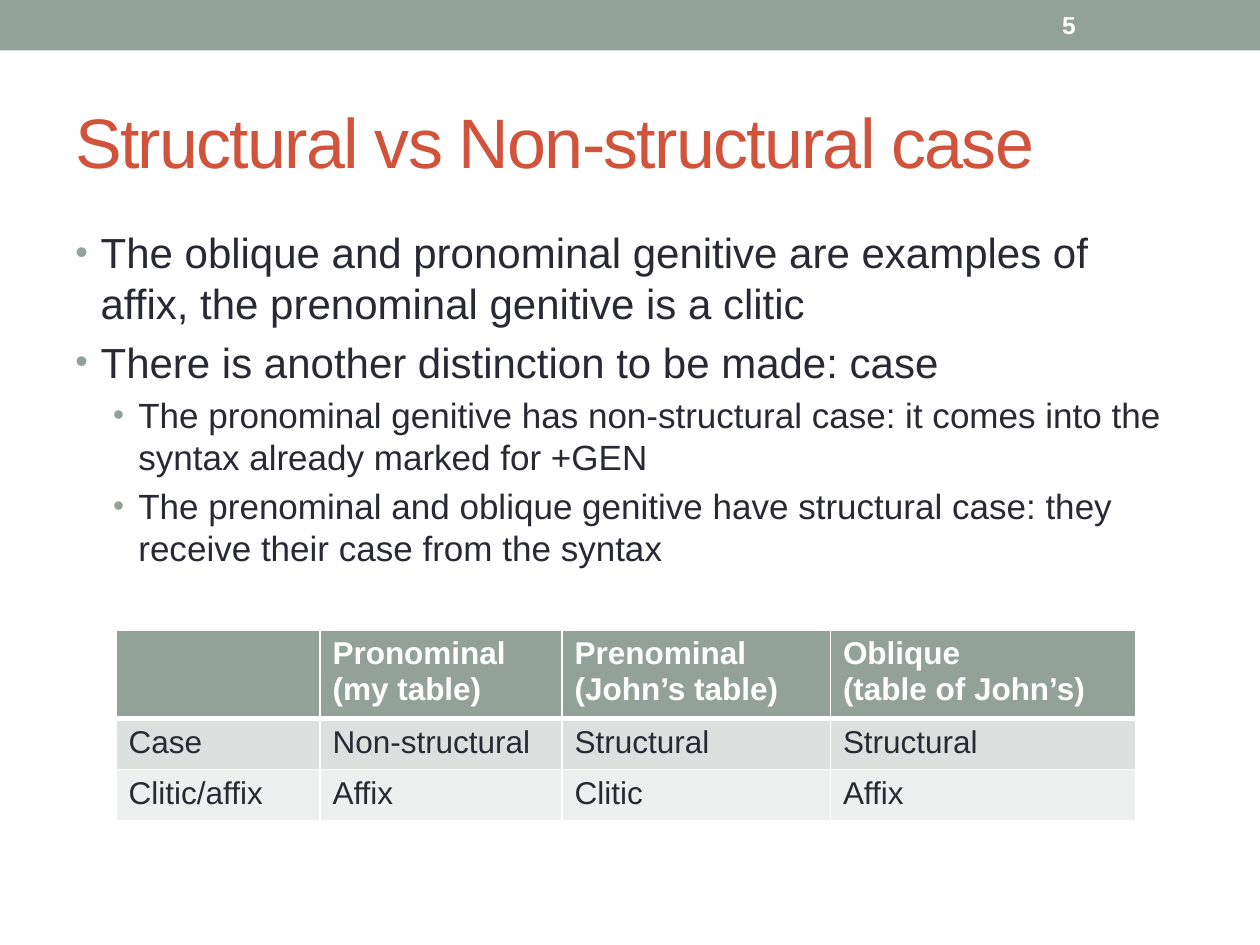
import pptx
import pptx.dml.color
import pptx.enum.shapes
import pptx.enum.text
import pptx.oxml
import pptx.oxml.ns
import pptx.util

Cm = pptx.util.Cm
Pt = pptx.util.Pt
RGBColor = pptx.dml.color.RGBColor

SAGE = RGBColor(0x93, 0xA2, 0x99)
RUST = RGBColor(0xD2, 0x53, 0x3C)
INK = RGBColor(0x29, 0x29, 0x34)
WHITE = RGBColor(0xFF, 0xFF, 0xFF)
ROW_FILLS = [SAGE, RGBColor(0xDC, 0xE0, 0xDE), RGBColor(0xEE, 0xF0, 0xEF)]
NAMESPACE = pptx.oxml.ns.nsdecls("a")

BULLETS = [
    (0, "The oblique and pronominal genitive are examples of affix, the prenominal genitive is a clitic"),
    (0, "There is another distinction to be made: case"),
    (1, "The pronominal genitive has non-structural case: it comes into the syntax already marked for +GEN"),
    (1, "The prenominal and oblique genitive have structural case: they receive their case from the syntax"),
]
# Per level: text size, left margin in cm, bullet size in percent
LEVELS = [(24, 0.51, 85), (20, 1.27, 90)]

TABLE_ROWS = [
    ["", "Pronominal\n(my table)", "Prenominal\v(John’s table)", "Oblique\v(table of John’s)"],
    ["Case", "Non-structural", "Structural", "Structural"],
    ["Clitic/affix", "Affix", "Clitic", "Affix"],
]
COLUMN_WIDTHS = [4.11, 4.88, 5.41, 6.15]
ROW_HEIGHTS = [1.65, 1.03, 1.03]


def format_font(font, **values):
    for name, value in {"name": "Arial", "bold": False, **values}.items():
        if name == "color":
            font.color.rgb = value
        else:
            setattr(font, name, value)


def add_text_frame(left, top, width, height, anchor):
    text_box = slide.shapes.add_textbox(Cm(left), Cm(top), Cm(width), Cm(height))
    text_box.text_frame.word_wrap = True
    text_box.text_frame.vertical_anchor = anchor
    return text_box.text_frame


presentation = pptx.Presentation()
presentation.slide_width = Cm(25.4)
presentation.slide_height = Cm(19.05)
slide = presentation.slides.add_slide(presentation.slide_layouts[6])
anchors = pptx.enum.text.MSO_ANCHOR

# Top band
band = slide.shapes.add_shape(
    pptx.enum.shapes.MSO_SHAPE.RECTANGLE, 0, 0, presentation.slide_width, Cm(1.02))
band.shadow.inherit = False
band.fill.solid()
band.fill.fore_color.rgb = SAGE
band.line.fill.background()

# Title
title = add_text_frame(1.27, 1.47, 22.86, 2.74, anchors.MIDDLE).paragraphs[0]
title_run = title.add_run()
title_run.text = "Structural vs Non-structural case"
format_font(title_run.font, size=Pt(40), color=RUST)
title_run.font._element.set("spc", "-100")

# Bulleted body
body = add_text_frame(1.27, 4.45, 22.86, 13.54, anchors.TOP)
for index, (level, text) in enumerate(BULLETS):
    size, margin, bullet_percent = LEVELS[level]
    paragraph = body.paragraphs[0] if index == 0 else body.add_paragraph()
    paragraph.level = level
    paragraph.space_before = Pt(size * 0.2)
    run = paragraph.add_run()
    run.text = text
    format_font(run.font, size=Pt(size), color=INK)
    properties = paragraph._p.get_or_add_pPr()
    properties.set("marL", str(Cm(margin)))
    properties.set("indent", str(-Cm(0.51)))
    for bullet_xml in (
        f'<a:buClr {NAMESPACE}><a:srgbClr val="{SAGE}"/></a:buClr>',
        f'<a:buSzPct {NAMESPACE} val="{bullet_percent * 1000}"/>',
        f'<a:buFont {NAMESPACE} typeface="Arial"/>',
        f'<a:buChar {NAMESPACE} char="•"/>',
    ):
        properties.append(pptx.oxml.parse_xml(bullet_xml))

# Slide number
number = add_text_frame(21.16, 0.05, 2.97, 0.91, anchors.MIDDLE).paragraphs[0]
number_run = number.add_run()
number_run.text = "5"
format_font(number_run.font, size=Pt(14), color=WHITE, bold=True)

# Genitive table
table = slide.shapes.add_table(
    len(TABLE_ROWS), len(COLUMN_WIDTHS), Cm(2.34), Cm(12.7),
    Cm(sum(COLUMN_WIDTHS)), Cm(sum(ROW_HEIGHTS))).table
for column, width in zip(table.columns, COLUMN_WIDTHS):
    column.width = Cm(width)
for row_index, (row, height) in enumerate(zip(table.rows, ROW_HEIGHTS)):
    row.height = Cm(height)
    is_header = row_index == 0
    border_widths = {
        "lnL": 1,
        "lnR": 1,
        "lnT": 3 if row_index == 1 else 1,
        "lnB": 3 if is_header else 1,
    }
    for cell, text in zip(row.cells, TABLE_ROWS[row_index]):
        cell.text = text
        for paragraph in cell.text_frame.paragraphs:
            format_font(paragraph.font, size=Pt(18))
            for run in paragraph.runs:
                format_font(run.font, size=Pt(18), bold=is_header,
                            color=WHITE if is_header else INK)
        cell_properties = cell._tc.get_or_add_tcPr()
        for side, width in border_widths.items():
            cell_properties.append(pptx.oxml.parse_xml(
                f'<a:{side} {NAMESPACE} w="{Pt(width)}"><a:solidFill>'
                f'<a:srgbClr val="{WHITE}"/></a:solidFill></a:{side}>'))
        cell.fill.solid()
        cell.fill.fore_color.rgb = ROW_FILLS[row_index]

presentation.save("out.pptx")
